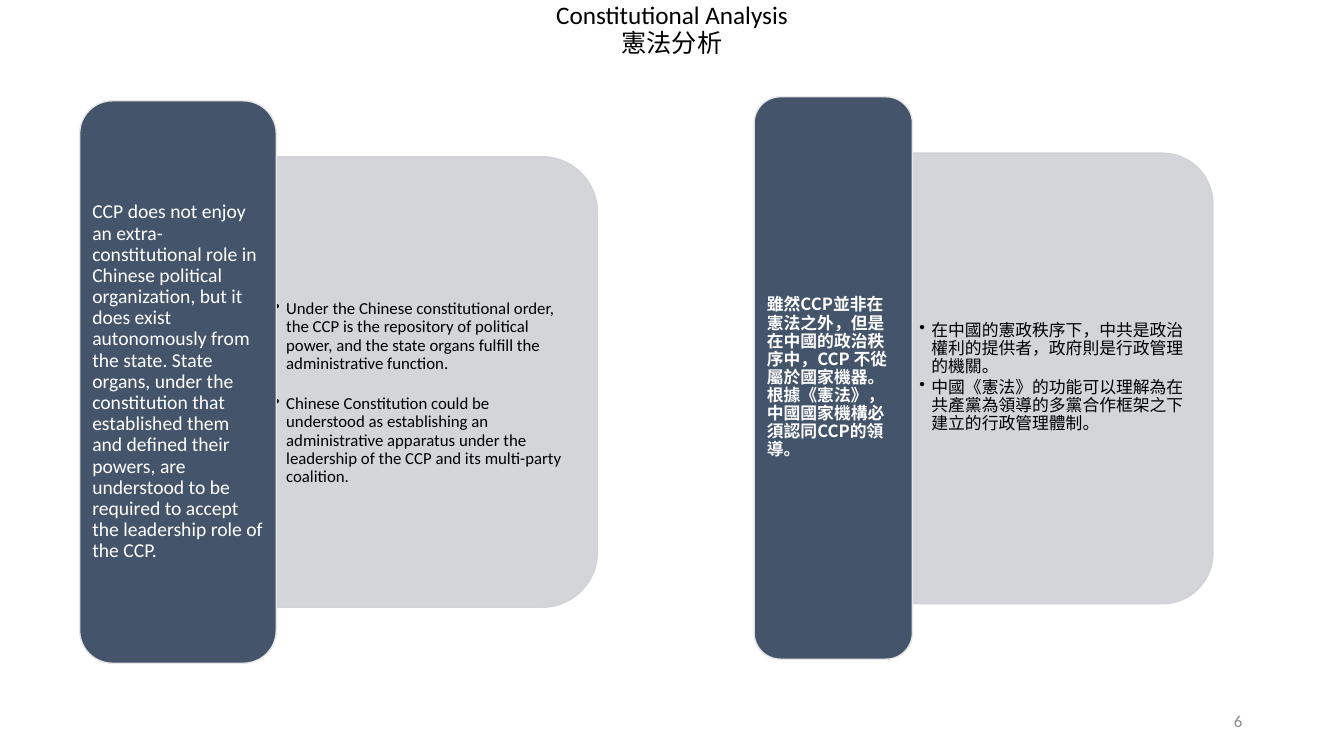
from lxml import etree
from pptx import Presentation
from pptx.dml.color import RGBColor
from pptx.enum.shapes import MSO_SHAPE
from pptx.enum.text import MSO_ANCHOR, PP_ALIGN
from pptx.oxml.ns import qn
from pptx.util import Inches, Pt

ROUND = MSO_SHAPE.ROUNDED_RECTANGLE
TAB = MSO_SHAPE.ROUND_2_SAME_RECTANGLE
MIDDLE = MSO_ANCHOR.MIDDLE
LEFT, CENTER, RIGHT = PP_ALIGN.LEFT, PP_ALIGN.CENTER, PP_ALIGN.RIGHT

LATIN, HAN = "Calibri", "Noto Sans CJK TC"
COLORS = {"ink": "000000", "white": "FFFFFF", "navy": "44546A",
          "edge": "E7E6E6", "panel": "CFD1D4", "page": "8C8C8C"}


def color(name):
    return RGBColor.from_string(COLORS[name])


def style(para, size, font, ink, align=LEFT, bold=False):
    """Set the look of a whole paragraph and of its runs' Han text."""
    para.alignment = align
    para.font.size, para.font.name = Pt(size), font
    para.font.bold = bold
    para.font.color.rgb = color(ink)
    for run in para.runs:
        props = run._r.get_or_add_rPr()
        etree.SubElement(props, qn("a:ea"), typeface=HAN)


def set_frame(frame, side=0.1, top=0.05):
    frame.word_wrap = True
    frame.vertical_anchor = MIDDLE
    frame.margin_left = frame.margin_right = Inches(side)
    frame.margin_top = frame.margin_bottom = Inches(top)


def add_block(slide, kind, box, fill, line):
    block = slide.shapes.add_shape(kind, *map(Inches, box))
    block.shadow.inherit = False
    block.fill.solid()
    block.fill.fore_color.rgb = color(fill)
    block.line.color.rgb = color(line)
    block.line.width = Pt(1)
    return block


def add_panel(slide, box):
    """Grey panel with its rounded end turned to the right."""
    panel = add_block(slide, TAB, box, "panel", "panel")
    panel.rotation = 90
    for tint in panel._element.spPr.iter(qn("a:srgbClr")):
        etree.SubElement(tint, qn("a:alpha"), val="90000")


def add_points(slide, box, points, font, gap):
    frame = slide.shapes.add_textbox(*map(Inches, box)).text_frame
    set_frame(frame, 0.1, 0.1)
    for i, point in enumerate(points):
        para = frame.paragraphs[0] if i == 0 else frame.add_paragraph()
        para.text = point
        props = para._p.get_or_add_pPr()
        props.set("marL", str(Inches(0.12)))
        props.set("indent", str(-Inches(0.12)))
        etree.SubElement(props, qn("a:buChar"), char="•")
        para.line_spacing = 0.9
        if i:
            para.space_before = Pt(gap)
        style(para, 12, font, "ink")


def add_bar(slide, box, text, size, font, side, bold):
    bar = add_block(slide, ROUND, box, "navy", "edge")
    set_frame(bar.text_frame, side, 0.03)
    para = bar.text_frame.paragraphs[0]
    para.text = text
    para.line_spacing = 0.9
    style(para, size, font, "white", bold=bold)


def add_title(slide, text):
    title = slide.shapes.title
    title.left, title.top = Inches(0), Inches(0)
    title.width, title.height = Inches(13.33), Inches(0.6)
    set_frame(title.text_frame)
    para = title.text_frame.paragraphs[0]
    para.text = text
    para.line_spacing = 0.9
    style(para, 18, LATIN, "ink", CENTER)


def add_page(slide, text):
    box = slide.shapes.add_textbox(*map(Inches, (9.42, 6.95, 3, 0.4)))
    set_frame(box.text_frame)
    para = box.text_frame.paragraphs[0]
    para.text = text
    style(para, 12, LATIN, "page", RIGHT)


def main():
    deck = Presentation()
    deck.slide_width, deck.slide_height = Inches(13.33), Inches(7.5)
    slide = deck.slides.add_slide(deck.slide_layouts[5])
    add_title(slide, "Constitutional Analysis\v憲法分析")

    # English side
    add_panel(slide, (2.04, 2.14, 4.47, 3.3))
    add_points(slide, (2.62, 1.83, 3.14, 4.14), [
        "Under the Chinese constitutional order, the CCP is the repository "
        "of political power, and the state organs fulfill the "
        "administrative function.",
        "Chinese Constitution could be understood as establishing an "
        "administrative apparatus under the leadership of the CCP and its "
        "multi-party coalition.",
    ], LATIN, 16)
    add_bar(slide, (0.79, 1, 1.95, 5.58),
            "CCP does not enjoy an extra-constitutional role in Chinese "
            "political organization, but it does exist autonomously from "
            "the state. State organs, under the constitution that "
            "established them and defined their powers, are understood to "
            "be required to accept the leadership role of the CCP.",
            14, LATIN, 0.03, False)

    # Chinese side
    add_panel(slide, (8.29, 2.25, 4.47, 3.01))
    add_points(slide, (9.02, 1.66, 2.86, 4.17), [
        "在中國的憲政秩序下，中共是政治權利的提供者，政府則是行政管理的機關。",
        "中國《憲法》的功能可以理解為在共產黨為領導的多黨合作框架之下"
        "建立的行政管理體制。",
    ], HAN, 1.8)
    add_bar(slide, (7.48, 0.96, 1.57, 5.58),
            "雖然CCP並非在憲法之外，但是在中國的政治秩序中，CCP 不從屬於"
            "國家機器。根據《憲法》，中國國家機構必須認同CCP的領導。",
            12, HAN, 0.05, True)

    add_page(slide, "6")
    deck.save("out.pptx")


if __name__ == "__main__":
    main()
